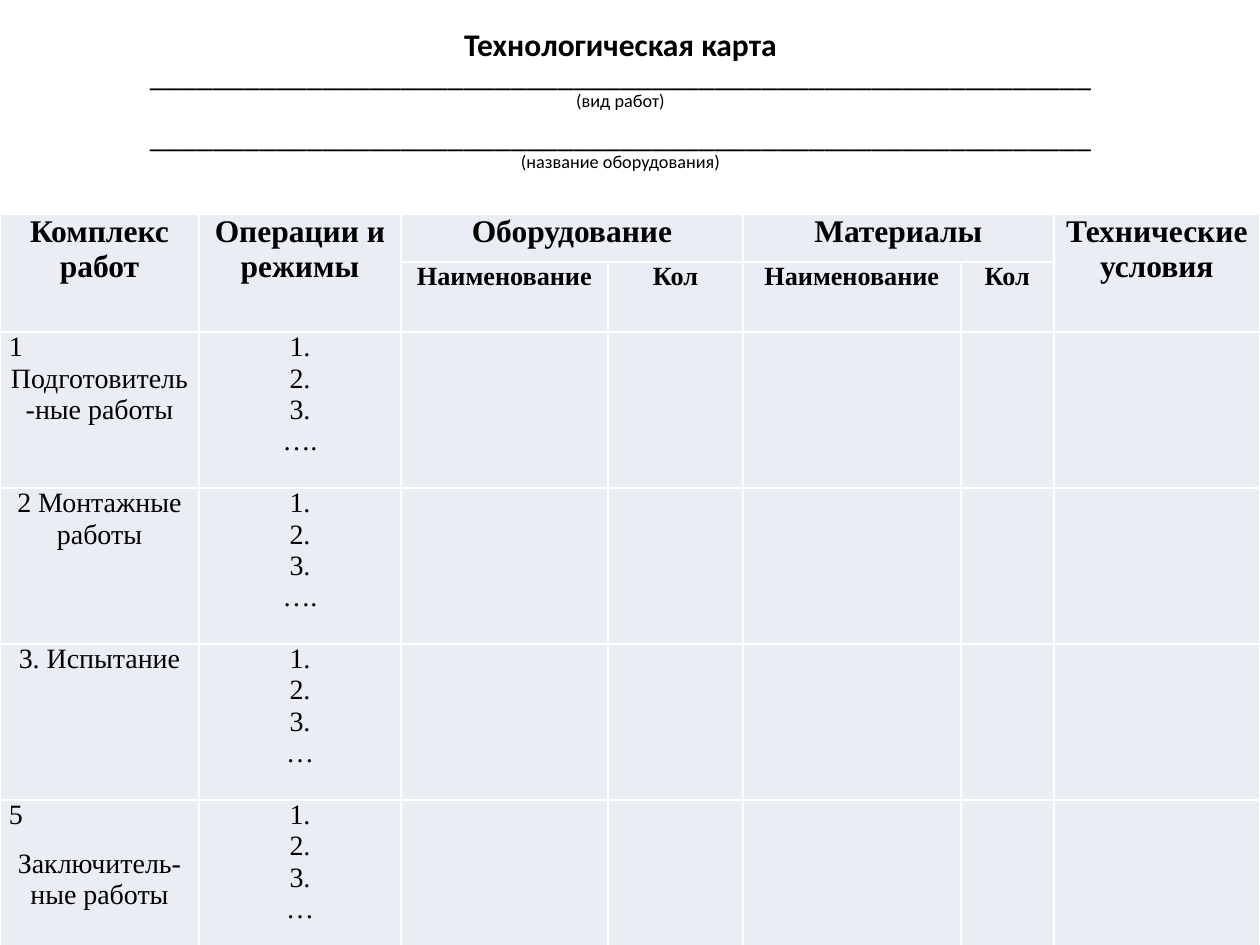
from lxml import etree
from pptx import Presentation, util as u
from pptx.dml.color import RGBColor
from pptx.enum import text
from pptx.oxml import ns

BLACK = RGBColor(0x00, 0x00, 0x00)
WHITE = RGBColor(0xFF, 0xFF, 0xFF)
PALE = RGBColor(0xE9, 0xED, 0xF4)

HEADING = dict(name="Calibri", size=u.Pt(18), bold=True)
BLANK_LINE = dict(HEADING, bold=False)
GROUP = dict(name="Times New Roman", size=u.Pt(18), bold=True)
COLUMN = dict(GROUP, size=u.Pt(15))
BODY = dict(GROUP, size=u.Pt(16), bold=False)

COLS = [199, 202, 207, 135, 218, 93, 206]
ROWS = [48, 70] + [156] * 4
GROUPS = [
    (0, 2, 1, "Комплекс работ"),
    (1, 2, 1, "Операции и режимы"),
    (2, 1, 2, "Оборудование"),
    (4, 1, 2, "Материалы"),
    (6, 2, 1, "Технические условия"),
]
COLUMNS = ["Наименование", "Кол"] * 2
STAGES = [
    (["1", "Подготовитель-ные работы"], "…."),
    (["2 Монтажные работы"], "…."),
    (["3. Испытание"], "…"),
    (["5", "Заключитель-", "ные работы"], "…"),
]


def px(n):
    """Turn pixels into EMU."""
    return u.Emu(round(n * 914400 / 126))


def write(tf, lines, fmt):
    """Fill a text frame with centred lines and return its paragraphs."""
    for i, line in enumerate(lines):
        p = tf.add_paragraph() if i else tf.paragraphs[0]
        p.alignment = text.PP_ALIGN.CENTER
        r = p.add_run()
        r.text = line
        r.font.color.rgb = BLACK
        for key, value in fmt.items():
            setattr(r.font, key, value)
    return tf.paragraphs


def style_cell(cell):
    """Give a cell its margins, white borders and pale fill."""
    margins = dict(left=9, right=9, top=0, bottom=0)
    for side, n in margins.items():
        setattr(cell, f"margin_{side}", px(n))
    tcPr = cell._tc.get_or_add_tcPr()
    for side in "LRTB":
        ln = etree.SubElement(tcPr, ns.qn(f"a:ln{side}"), w=str(u.Pt(1)))
        fill = etree.SubElement(ln, ns.qn("a:solidFill"))
        etree.SubElement(fill, ns.qn("a:srgbClr"), val=str(WHITE))
    cell.fill.solid()
    cell.fill.fore_color.rgb = PALE


def add_heading(s, x, y, w, h):
    """Place the title with its two captioned lines to fill in."""
    sp = s.shapes.title
    sp.left, sp.top, sp.width, sp.height = map(px, (x, y, w, h))
    tf = sp.text_frame
    frame = dict(word_wrap=True, auto_size=text.MSO_AUTO_SIZE.NONE,
                 vertical_anchor=text.MSO_ANCHOR.TOP)
    for key, value in frame.items():
        setattr(tf, key, value)
    rule = "_" * 60
    lines = ["Технологическая карта", rule, "(вид работ)",
             rule, "(название оборудования)"]
    paragraphs = write(tf, lines, BLANK_LINE)
    paragraphs[0].runs[0].font.bold = True
    for p in paragraphs:
        p.line_spacing = 0.8
    for p in paragraphs[2::2]:
        p.runs[0]._r.get_or_add_rPr().set("baseline", "30000")


def add_work_table(s, x, y):
    """Place the table of work stages."""
    box = map(px, (x, y, sum(COLS), sum(ROWS)))
    table = s.shapes.add_table(len(ROWS), len(COLS), *box).table
    table.first_row = table.horz_banding = False
    for col, n in zip(table.columns, COLS):
        col.width = px(n)
    for row, n in zip(table.rows, ROWS):
        row.height = px(n)
    for cell in table.iter_cells():
        style_cell(cell)

    for c, down, across, label in GROUPS:
        cell = table.cell(0, c)
        cell.merge(table.cell(down - 1, c + across - 1))
        write(cell.text_frame, [label], GROUP)
    for c, label in enumerate(COLUMNS, 2):
        write(table.cell(1, c).text_frame, [label], COLUMN)
    for row, (stage, dots) in enumerate(STAGES, 2):
        paragraphs = write(table.cell(row, 0).text_frame, stage, BODY)
        if len(stage) > 1:
            paragraphs[0].alignment = text.PP_ALIGN.LEFT
        if len(stage) > 2:
            paragraphs[1].space_before = u.Pt(10)
        write(table.cell(row, 1).text_frame, ["1.", "2.", "3.", dots], BODY)


def main():
    """Build and save the slide."""
    prs = Presentation()
    prs.slide_width, prs.slide_height = px(1260), px(945)
    s = prs.slides.add_slide(prs.slide_layouts.get_by_name("Title Only"))
    add_heading(s, 25, 26, 1191, 165)
    add_work_table(s, 0, 214)
    prs.save("out.pptx")


if __name__ == "__main__":
    main()
